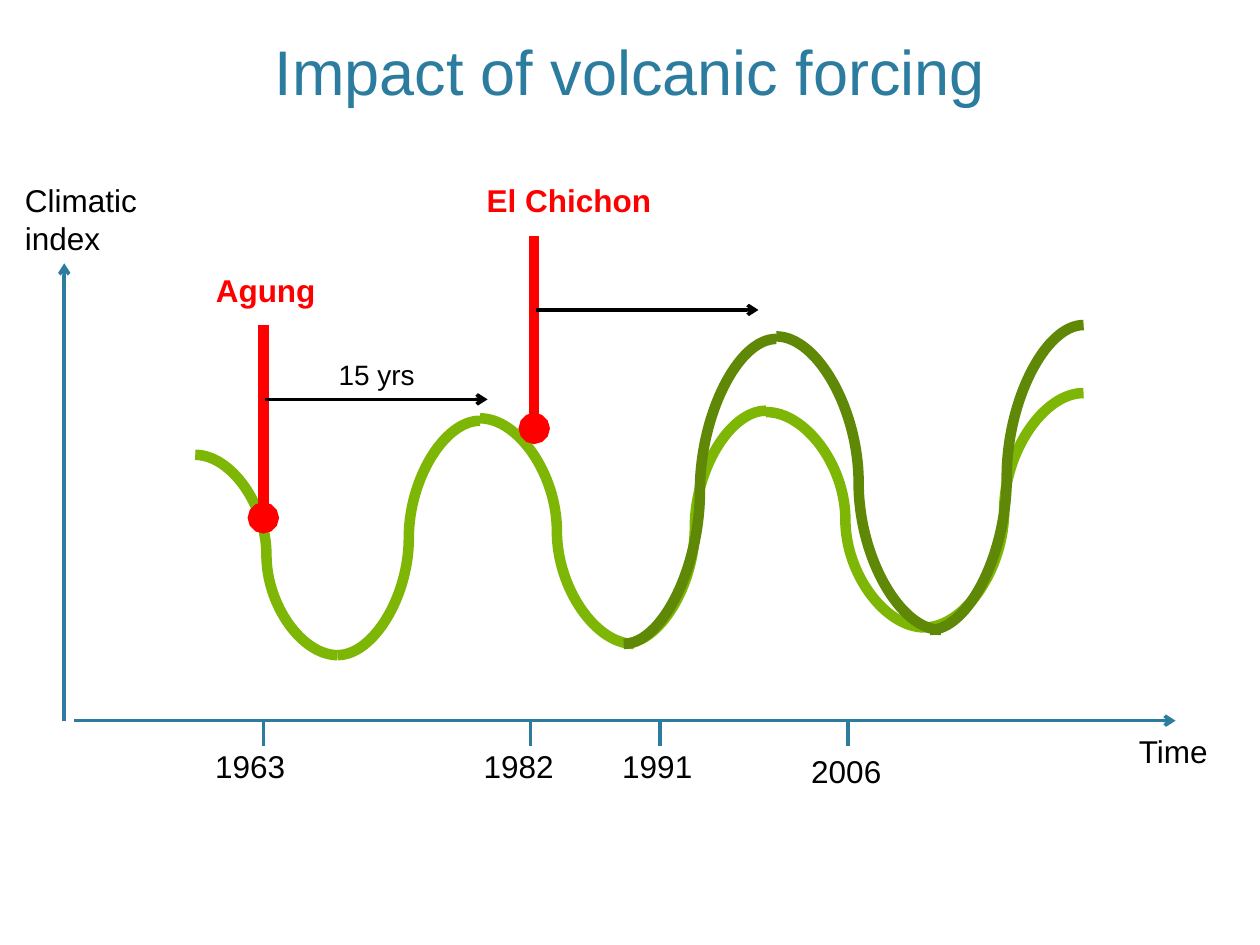
from lxml import etree
from pptx import Presentation
from pptx.dml.color import RGBColor
from pptx.enum.shapes import MSO_CONNECTOR as Connector
from pptx.enum.text import MSO_ANCHOR as Anchor, PP_ALIGN as Align
from pptx.oxml.ns import qn
from pptx.util import Inches, Pt

CELL = 0.1  # the slide is a grid of 100 columns by 75 rows
COLUMNS, ROWS = 100, 75


def cells(count):
    return Inches(count * CELL)


def color(value):
    return RGBColor.from_string(value)


def write_text(frame, text, size=18, fill="000000", bold=False, font="Arial", align=Align.LEFT):
    paragraph = frame.paragraphs[0]
    paragraph.alignment = align
    run = paragraph.add_run()
    run.text = text
    run.font.name = font
    run.font.size = Pt(size)
    run.font.bold = bold
    run.font.color.rgb = color(fill)


class Diagram:
    blue, red, black = "2C7C9F", "FF0000", "000000"
    light_green, dark_green = "7EB606", "5E8805"
    thin, thick = 2, 6

    def __init__(self, slide):
        self.slide = slide

    def text(self, text, left, top, width, height=4, anchor=Anchor.TOP, **style):
        box = self.slide.shapes.add_textbox(cells(left), cells(top), cells(width), cells(height))
        frame = box.text_frame
        frame.word_wrap = True
        frame.vertical_anchor = anchor
        write_text(frame, text, **style)

    def line(self, start, end, fill, width=thin, tip=None, kind=Connector.STRAIGHT):
        connector = self.slide.shapes.add_connector(kind, *map(cells, (*start, *end)))
        connector.line.color.rgb = color(fill)
        connector.line.width = Pt(width)
        properties = connector._element.spPr
        if tip:
            outline = properties.find(qn("a:ln"))
            etree.SubElement(outline, qn("a:tailEnd"), type=tip)
        etree.SubElement(properties, qn("a:effectLst"))

    def wave(self, segments, fill):
        for x1, y1, x2, y2 in segments:
            self.line((x1, y1), (x2, y2), fill, self.thick, kind=Connector.CURVE)

    def eruption(self, name, x, top):
        self.text(name, x - 4.75, top, 17.3, fill=self.red, bold=True)
        self.line((x, top + 4.8), (x, top + 20.1), self.red, self.thick, "oval")
        self.line((x + 0.1, top + 10.7), (x + 17.8, top + 10.7), self.black, tip="arrow")

    def year(self, label, x, label_left, label_top, axis):
        self.line((x, axis), (x, axis + 2), self.blue)
        self.text(label, label_left, label_top, 13.4)


def main():
    presentation = Presentation()
    presentation.slide_width = cells(COLUMNS)
    presentation.slide_height = cells(ROWS)
    slide = presentation.slides.add_slide(presentation.slide_layouts[6])
    diagram = Diagram(slide)
    axis = 57.2

    # Title
    diagram.text("Impact of volcanic forcing", 0, -1.1, COLUMNS, 10.2, Anchor.BOTTOM,
                 size=36, fill=diagram.blue, align=Align.CENTER)

    # Vertical axis and axis names
    diagram.line((5.1, axis), (5.1, 20.9), diagram.blue, tip="arrow")
    diagram.text("Climatic index", 1, 13.9, 15.7, 7.1)
    diagram.text("Time", 89.4, 57.6, 15.7)

    # Climatic index without further forcing
    diagram.wave([
        (15.5, 36.1, 26.8, 52),
        (26.8, 52, 38.1, 33.4),
        (38.1, 33.2, 50.3, 51.1),
        (49.5, 51.1, 60.8, 32.6),
        (60.8, 32.7, 73.4, 49.8),
        (73.4, 49.8, 86, 31.2),
    ], diagram.light_green)

    # Eruptions and their delayed effect
    diagram.eruption("Agung", 20.9, 21)
    diagram.text("15 yrs", 25.9, 27.9, 8.7, 3.7, size=16)
    diagram.eruption("El Chichon", 42.4, 13.9)

    # Amplified response
    diagram.wave([
        (49.5, 51.1, 61.6, 26.9),
        (61.6, 26.7, 74.7, 50),
        (73.8, 50, 86, 25.8),
    ], diagram.dark_green)

    # Time axis with its marked years
    diagram.line((5.9, axis), (93.3, axis), diagram.blue, tip="arrow")
    for label, x, label_left, label_top in [
        ("1963", 20.9, 16.1, 58.8),
        ("1982", 42.1, 37.4, 58.8),
        ("1991", 52.4, 48.4, 58.8),
        ("2006", 67.3, 63.4, 59.2),
    ]:
        diagram.year(label, x, label_left, label_top, axis)

    presentation.save("out.pptx")


if __name__ == "__main__":
    main()
